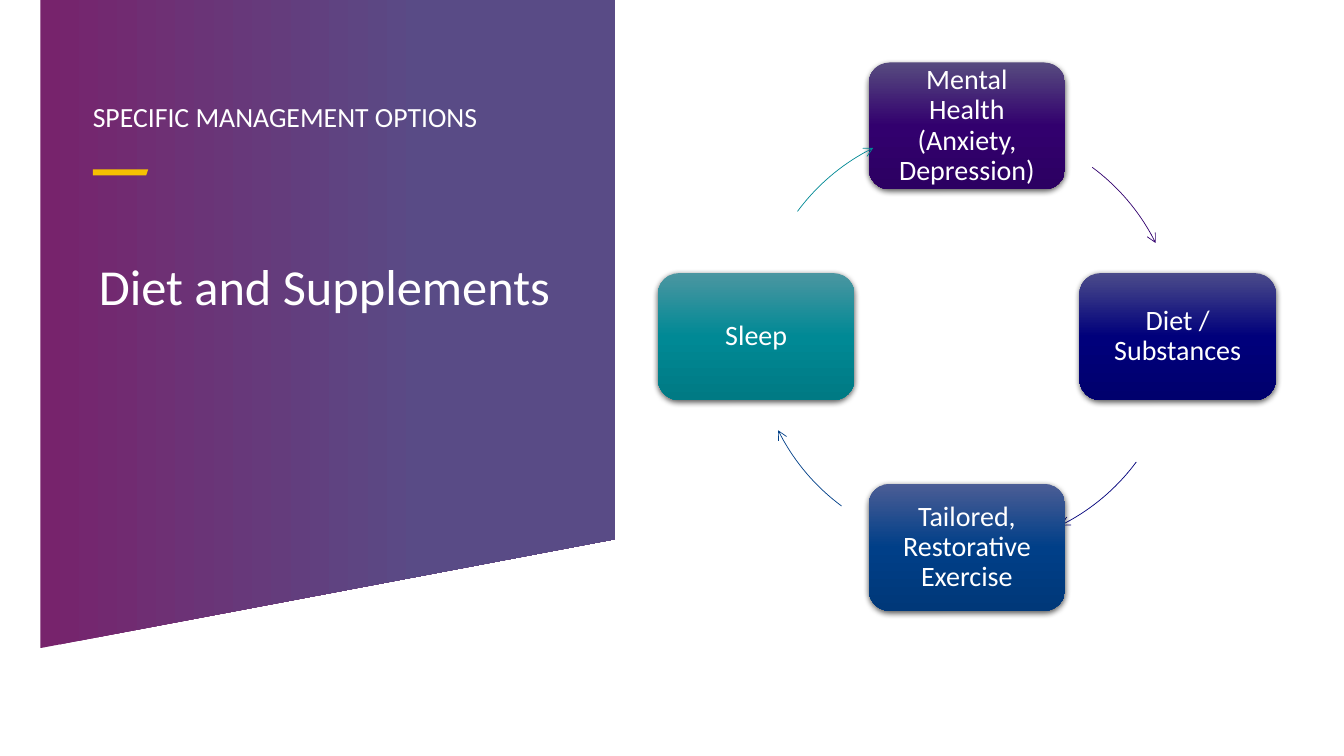
from lxml import etree
from pptx import Presentation
from pptx.dml.color import RGBColor
from pptx.enum.shapes import MSO_SHAPE as Preset
from pptx.enum.text import MSO_ANCHOR as Anchor, MSO_AUTO_SIZE as AutoSize, PP_ALIGN as Align
from pptx.oxml.ns import qn
from pptx.util import Inches, Pt


def rgb(hex_colour):
    return RGBColor.from_string(hex_colour)


def add_node(parent, tag, **attributes):
    return etree.SubElement(parent, qn(tag), {k: str(v) for k, v in attributes.items()})


class SlideBuilder:
    font = "Calibri"
    text_colour = "FFFFFF"

    def __init__(self, slide):
        self.slide = slide
        self.shapes = slide.shapes

    def add_text(self, frame, text, size, align, spacing):
        frame.word_wrap = True
        paragraph = frame.paragraphs[0]
        paragraph.alignment = align
        paragraph.line_spacing = spacing
        paragraph.space_before = Pt(0)
        run = paragraph.add_run()
        run.text = text
        run.font.name = self.font
        run.font.size = Pt(size)
        run.font.color.rgb = rgb(self.text_colour)

    def gradient(self, shape, stops, angle):
        """Fill with (percent, colour) stops; the angle runs clockwise."""
        shape.fill.gradient()
        shape.fill.gradient_angle = -angle % 360
        stop_list = shape._element.spPr.find(qn("a:gradFill")).find(qn("a:gsLst"))
        for old_stop in list(stop_list):
            stop_list.remove(old_stop)
        for percent, colour in stops:
            stop = add_node(stop_list, "a:gs", pos=percent * 1000)
            add_node(stop, "a:srgbClr", val=colour)

    def polygon(self, points):
        corners = [(Inches(x), Inches(y)) for x, y in points]
        builder = self.shapes.build_freeform(*corners[0])
        builder.add_line_segments(corners[1:], close=True)
        shape = builder.convert_to_shape()
        shape.shadow.inherit = False
        shape.line.fill.background()
        return shape

    def placeholder(self, holder, box, text, size, indent=0):
        """Place and fill a placeholder, in front of what is already drawn."""
        self.shapes._spTree.append(holder._element)
        holder.left, holder.top, holder.width, holder.height = map(Inches, box)
        frame = holder.text_frame
        frame.auto_size = AutoSize.NONE
        frame.vertical_anchor = Anchor.TOP
        properties = frame.paragraphs[0]._p.get_or_add_pPr()
        properties.set("marL", str(Inches(indent)))
        properties.set("indent", "0")
        add_node(properties, "a:buNone")
        self.add_text(frame, text, size, Align.LEFT, Pt(30.8))

    def card(self, center, size, text, colours):
        (x, y), (width, height) = center, size
        card = self.shapes.add_shape(
            Preset.ROUNDED_RECTANGLE, Inches(x - width / 2), Inches(y - height / 2),
            Inches(width), Inches(height))
        card.line.fill.background()
        self.gradient(card, zip((0, 50, 100), colours), 90)
        card.shadow.inherit = False
        effects = card._element.spPr.find(qn("a:effectLst"))
        shadow = add_node(effects, "a:outerShdw", blurRad=Pt(4.5), dist=Pt(1.5),
                          dir=5400000, algn="ctr", rotWithShape=0)
        add_node(add_node(shadow, "a:srgbClr", val="000000"), "a:alpha", val=63000)
        frame = card.text_frame
        frame.margin_left = frame.margin_right = Inches(0.14)
        frame.vertical_anchor = Anchor.MIDDLE
        self.add_text(frame, text, 20, Align.CENTER, 0.9)

    def arc_arrow(self, center, radius, start, end, colour):
        """Draw a clockwise arc between two angles in degrees, headed at its end."""
        x, y = center
        arc = self.shapes.add_shape(Preset.ARC, Inches(x - radius), Inches(y - radius),
                                    Inches(2 * radius), Inches(2 * radius))
        # Adjustments count in 100000ths, arc angles in 60000ths of a degree
        for index, angle in enumerate((start, end)):
            arc.adjustments[index] = angle % 360 * 0.6
        arc.fill.background()
        arc.shadow.inherit = False
        arc.line.color.rgb = rgb(colour)
        arc.line.width = Pt(0.5)
        add_node(arc._element.spPr.find(qn("a:ln")), "a:tailEnd", type="arrow")


CYCLE_CENTER = (9.59, 3.34)
CYCLE_RADIUS = 2.09
CARD_SIZE = (1.95, 1.26)
ARC_START, ARC_END = 36.5, 63.6
# Clockwise from the top: unit direction, label, gradient colours
CYCLE = [
    ((0, -1), "Mental Health (Anxiety, Depression)", ("574B7F", "32006E", "2C0062")),
    ((1, 0), "Diet / Substances", ("4B4B8A", "00007B", "00006D")),
    ((0, 1), "Tailored, Restorative Exercise", ("4B5D95", "003F88", "003879")),
    ((-1, 0), "Sleep", ("4B96A1", "008995", "007A84")),
]


def main():
    deck = Presentation()
    deck.slide_width, deck.slide_height = Inches(13.33), Inches(7.5)
    slide = deck.slides.add_slide(deck.slide_layouts[1])
    builder = SlideBuilder(slide)
    heading, topic = slide.placeholders[1], slide.shapes.title

    panel = builder.polygon([(0.4, 0), (6.1, 0), (6.1, 5.35), (0.4, 6.43)])
    builder.gradient(panel, [(0, "77236C"), (67, "594B86"), (100, "594B86")], 0)
    accent = builder.polygon([(0.92, 1.68), (1.47, 1.68), (1.45, 1.74), (0.92, 1.74)])
    accent.fill.solid()
    accent.fill.fore_color.rgb = rgb("F5C001")

    builder.placeholder(heading, (0.57, 0.84, 4.81, 0.61),
                        "SPECIFIC MANAGEMENT OPTIONS", 19.8, indent=0.25)
    builder.placeholder(topic, (0.88, 2.65, 5.26, 0.8), "Diet and Supplements", 36)

    for step, ((dx, dy), label, colours) in enumerate(CYCLE):
        center = (CYCLE_CENTER[0] + dx * CYCLE_RADIUS, CYCLE_CENTER[1] + dy * CYCLE_RADIUS)
        builder.card(center, CARD_SIZE, label, colours)
        turn = 90 * step - 90
        builder.arc_arrow(CYCLE_CENTER, CYCLE_RADIUS, turn + ARC_START, turn + ARC_END,
                          colours[1])

    deck.save("out.pptx")


if __name__ == "__main__":
    main()
